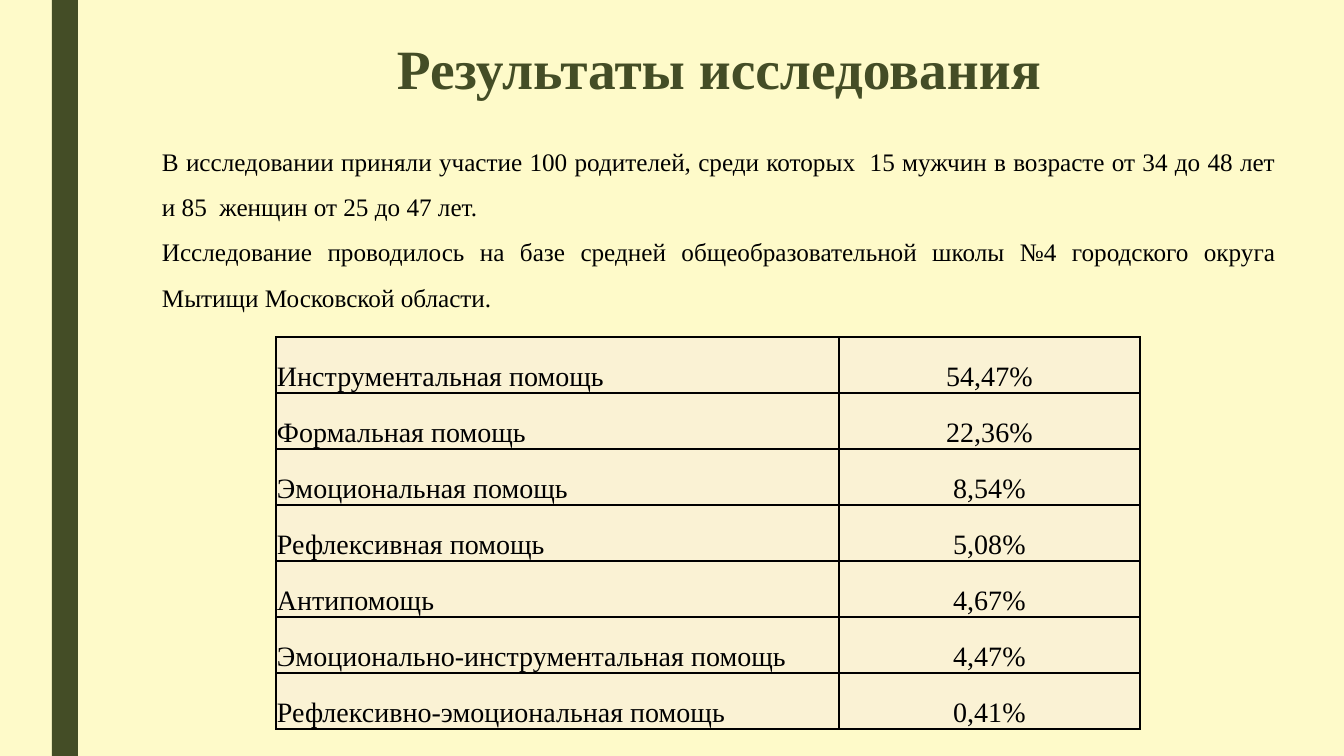
"""Build the slide with the results of the survey on parental help."""
from pptx import Presentation
from pptx import util as u
from pptx.dml.color import RGBColor
from pptx.enum import shapes, text
from pptx.oxml import parse_xml
from pptx.oxml.ns import nsdecls

TITLE = "Результаты исследования"
INTRO = [
    "В исследовании приняли участие 100 родителей, среди которых  15 мужчин "
    "в возрасте от 34 до 48 лет и 85  женщин от 25 до 47 лет.",
    "Исследование проводилось на базе средней общеобразовательной школы №4 "
    "городского округа Мытищи Московской области.",
]
HELP_SHARES = [
    ("Инструментальная помощь", "54,47%"),
    ("Формальная помощь", "22,36%"),
    ("Эмоциональная помощь", "8,54%"),
    ("Рефлексивная помощь", "5,08%"),
    ("Антипомощь", "4,67%"),
    ("Эмоционально-инструментальная помощь", "4,47%"),
    ("Рефлексивно-эмоциональная помощь", "0,41%"),
]

FONT = "Times New Roman"
CREAM = RGBColor(0xFE, 0xFA, 0xC9)
OLIVE = RGBColor(0x44, 0x4D, 0x26)
BLACK = RGBColor(0, 0, 0)
SAND = RGBColor(0xFA, 0xF2, 0xD4)

SLIDE_W, SLIDE_H = 1344, 756
COLUMN_W = (563, 301)
ROW_H = 56
ALIGN = text.PP_ALIGN


def px(*lengths):
    """Turn pixels into EMU."""
    return [u.Emu(round(length * 914400 / 100.8)) for length in lengths]


def write(frame, lines, size, color=BLACK, bold=False, align=ALIGN.LEFT, spacing=1.0):
    """Fill a text frame with one paragraph per line."""
    frame.word_wrap = True
    for i, line in enumerate(lines):
        paragraph = frame.add_paragraph() if i else frame.paragraphs[0]
        paragraph.alignment = align
        paragraph.line_spacing = spacing
        run = paragraph.add_run()
        run.text = line
        run.font.name = FONT
        run.font.size = u.Pt(size)
        run.font.bold = bold
        run.font.color.rgb = color


def outline(cell):
    """Draw a thin black border on every side of a cell."""
    properties = cell._tc.get_or_add_tcPr()
    for i, side in enumerate(("lnL", "lnR", "lnT", "lnB")):
        properties.insert(i, parse_xml(
            f'<a:{side} {nsdecls("a")} w="{u.Pt(1)}"><a:solidFill>'
            f'<a:srgbClr val="{BLACK}"/></a:solidFill></a:{side}>'))


def main():
    deck = Presentation()
    deck.slide_width, deck.slide_height = px(SLIDE_W, SLIDE_H)
    slide = deck.slides.add_slide(deck.slide_layouts[6])
    slide.background.fill.solid()
    slide.background.fill.fore_color.rgb = CREAM

    stripe = slide.shapes.add_shape(shapes.MSO_SHAPE.RECTANGLE, *px(52, 0, 26, SLIDE_H))
    stripe.shadow.inherit = False
    stripe.fill.solid()
    stripe.fill.fore_color.rgb = OLIVE
    stripe.line.fill.background()

    title = slide.shapes.add_textbox(*px(190, 34, 1058, 75)).text_frame
    title.vertical_anchor = text.MSO_ANCHOR.MIDDLE
    write(title, [TITLE], 39.6, OLIVE, bold=True, align=ALIGN.CENTER, spacing=0.89)

    intro = slide.shapes.add_textbox(*px(152, 126, 1134, 194)).text_frame
    write(intro, INTRO, 18, align=ALIGN.JUSTIFY, spacing=1.5)

    table_h = ROW_H * len(HELP_SHARES)
    table = slide.shapes.add_table(
        len(HELP_SHARES), len(COLUMN_W), *px(276, 337, sum(COLUMN_W), table_h)).table
    table.first_row = table.horz_banding = False
    for column, width in zip(table.columns, px(*COLUMN_W)):
        column.width = width
    for r, shares in enumerate(HELP_SHARES):
        for c, (entry, align) in enumerate(zip(shares, (ALIGN.LEFT, ALIGN.CENTER))):
            cell = table.cell(r, c)
            cell.fill.solid()
            cell.fill.fore_color.rgb = SAND
            cell.margin_left, cell.margin_right, cell.margin_top, cell.margin_bottom = px(1, 1, 1, 0)
            cell.vertical_anchor = text.MSO_ANCHOR.BOTTOM
            write(cell.text_frame, [entry], 20, align=align)
            outline(cell)

    deck.save("out.pptx")


if __name__ == "__main__":
    main()
